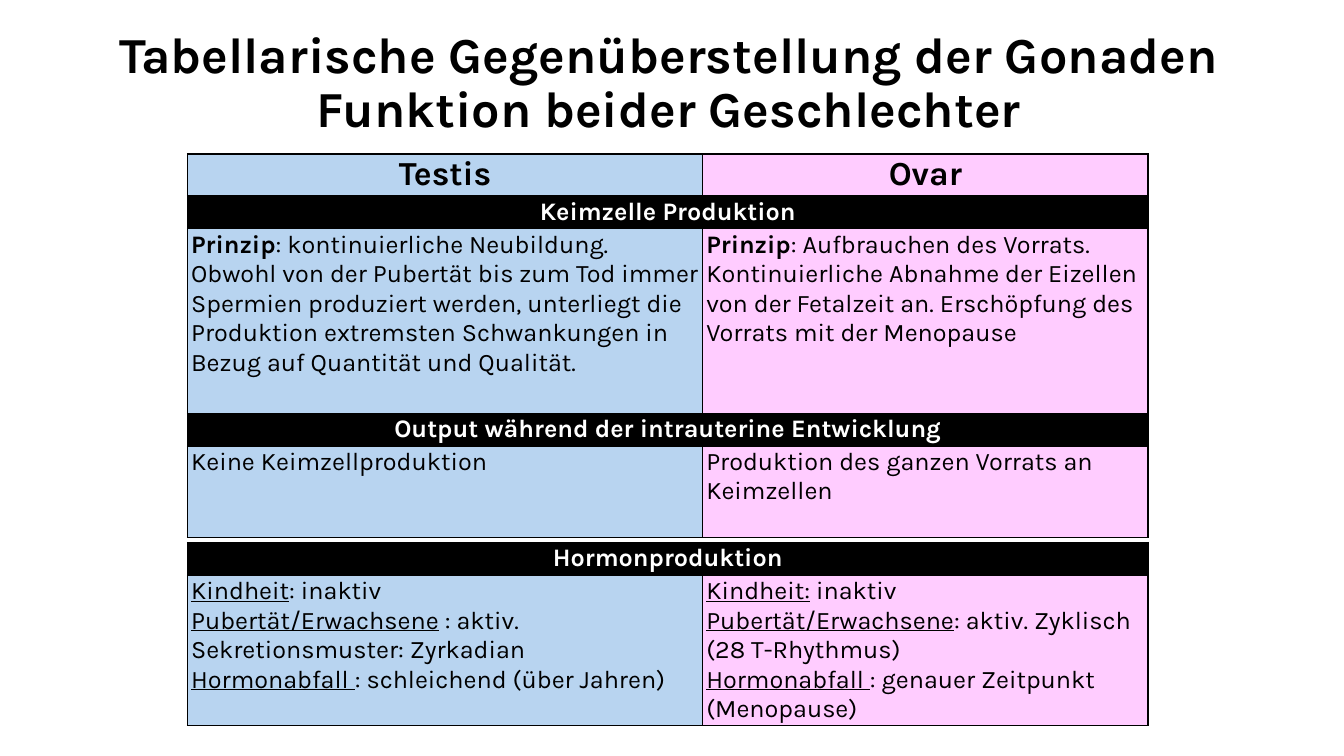
"""Build a slide that compares testis and ovary in two tables."""
from dataclasses import dataclass
from typing import Optional

from lxml.etree import SubElement
from pptx import Presentation
from pptx.dml.color import RGBColor
from pptx.enum.text import MSO_ANCHOR, MSO_AUTO_SIZE, PP_ALIGN as Align
from pptx.oxml.ns import qn
from pptx.util import Pt

BLACK = RGBColor(0x00, 0x00, 0x00)
WHITE = RGBColor(0xFF, 0xFF, 0xFF)
BLUE = RGBColor(0xB8, 0xD4, 0xF0)
PINK = RGBColor(0xFF, 0xCC, 0xFF)

FONT = "Karla"
TABLE_LEFT = 134
COLUMN_WIDTHS = (368, 318)
COLUMN_FILLS = (BLUE, PINK)
BAND_HEIGHT = 23.5


@dataclass(frozen=True)
class Span:
    text: str
    bold: bool = False
    underline: bool = False


Lines = list[list[Span]]


@dataclass(frozen=True)
class Row:
    height: float
    left: Lines
    right: Optional[Lines] = None
    size: float = 18
    align: Align = Align.LEFT


def heading(text: str) -> Lines:
    return [[Span(text, bold=True)]]


def band(text: str) -> Row:
    return Row(BAND_HEIGHT, heading(text), align=Align.CENTER)


def principle(rest: str) -> Lines:
    return [[Span("Prinzip", bold=True), Span(rest)]]


def phases(*pairs: tuple[str, str]) -> Lines:
    return [[Span(label, underline=True), Span(rest)] for label, rest in pairs]


GERM_CELL_ROWS = [
    Row(30, heading("Testis"), heading("Ovar"), size=24, align=Align.CENTER),
    band("Keimzelle Produktion"),
    Row(131.75,
        principle(": kontinuierliche Neubildung.\nObwohl von der Pubertät bis zum Tod "
                  "immer Spermien produziert werden, unterliegt die Produktion "
                  "extremsten Schwankungen in Bezug auf Quantität und Qualität."),
        principle(": Aufbrauchen des Vorrats.\nKontinuierliche Abnahme der Eizellen "
                  "von der Fetalzeit an. Erschöpfung des Vorrats mit der Menopause")),
    band("Output während der intrauterine Entwicklung"),
    Row(65.25,
        [[Span("Keine Keimzellproduktion")]],
        [[Span("Produktion des ganzen Vorrats an Keimzellen")]]),
]

HORMONE_ROWS = [
    band("Hormonproduktion"),
    Row(107.5,
        phases(("Kindheit", ": inaktiv"),
               ("Pubertät/Erwachsene", " : aktiv. Sekretionsmuster: Zyrkadian"),
               ("Hormonabfall ", ": schleichend (über Jahren)")),
        phases(("Kindheit:", " inaktiv"),
               ("Pubertät/Erwachsene", ": aktiv. Zyklisch (28 T-Rhythmus)"),
               ("Hormonabfall ", ": genauer Zeitpunkt (Menopause)"))),
]


def write_text(frame, lines: Lines, *, size: float, color: RGBColor,
               align: Align, line_spacing: float = 1.0) -> None:
    for index, spans in enumerate(lines):
        paragraph = frame.paragraphs[0] if index == 0 else frame.add_paragraph()
        paragraph.alignment = align
        paragraph.line_spacing = line_spacing
        paragraph.space_before = Pt(0)
        for span in spans:
            for part_index, part in enumerate(span.text.split("\n")):
                if part_index:
                    paragraph.add_line_break()
                run = paragraph.add_run()
                run.text = part
                font = run.font
                font.name, font.size = FONT, Pt(size)
                font.bold, font.underline = span.bold, span.underline
                font.color.rgb = color


def format_cell(cell, fill: RGBColor) -> None:
    cell.margin_left = cell.margin_right = Pt(2.5)
    cell.margin_top = cell.margin_bottom = Pt(0.75)
    properties = cell._tc.get_or_add_tcPr()
    for side in ("lnL", "lnR", "lnT", "lnB"):
        line = SubElement(properties, qn(f"a:{side}"), w=str(Pt(1)))
        line_fill = SubElement(line, qn("a:solidFill"))
        SubElement(line_fill, qn("a:srgbClr"), val=str(BLACK))
    cell.fill.solid()
    cell.fill.fore_color.rgb = fill


def add_comparison(slide, rows: list[Row], top: float) -> None:
    table = slide.shapes.add_table(
        len(rows), len(COLUMN_WIDTHS), Pt(TABLE_LEFT), Pt(top),
        Pt(sum(COLUMN_WIDTHS)), Pt(sum(row.height for row in rows))).table
    table.first_row = table.horz_banding = False
    for column, width in zip(table.columns, COLUMN_WIDTHS):
        column.width = Pt(width)
    for index, row in enumerate(rows):
        table.rows[index].height = Pt(row.height)
        is_band = row.right is None
        if is_band:
            table.cell(index, 0).merge(table.cell(index, 1))
        for column, lines in enumerate((row.left, row.right)):
            cell = table.cell(index, column)
            format_cell(cell, BLACK if is_band else COLUMN_FILLS[column])
            if lines:
                write_text(cell.text_frame, lines, size=row.size, align=row.align,
                           color=WHITE if is_band else BLACK)


def add_title(slide) -> None:
    title = slide.shapes.title
    title.left, title.top, title.width, title.height = Pt(32), Pt(8), Pt(891), Pt(104)
    frame = title.text_frame
    frame.word_wrap = True
    frame.auto_size = MSO_AUTO_SIZE.NONE
    frame.vertical_anchor = MSO_ANCHOR.MIDDLE
    write_text(frame, heading("Tabellarische Gegenüberstellung der Gonaden "
                              "Funktion beider Geschlechter"),
               size=36, color=BLACK, align=Align.CENTER, line_spacing=0.9)


def main() -> None:
    presentation = Presentation()
    presentation.slide_width, presentation.slide_height = Pt(960), Pt(540)
    slide = presentation.slides.add_slide(presentation.slide_layouts[5])
    add_title(slide)
    add_comparison(slide, GERM_CELL_ROWS, top=110)
    add_comparison(slide, HORMONE_ROWS, top=387.5)
    presentation.save("out.pptx")


if __name__ == "__main__":
    main()
